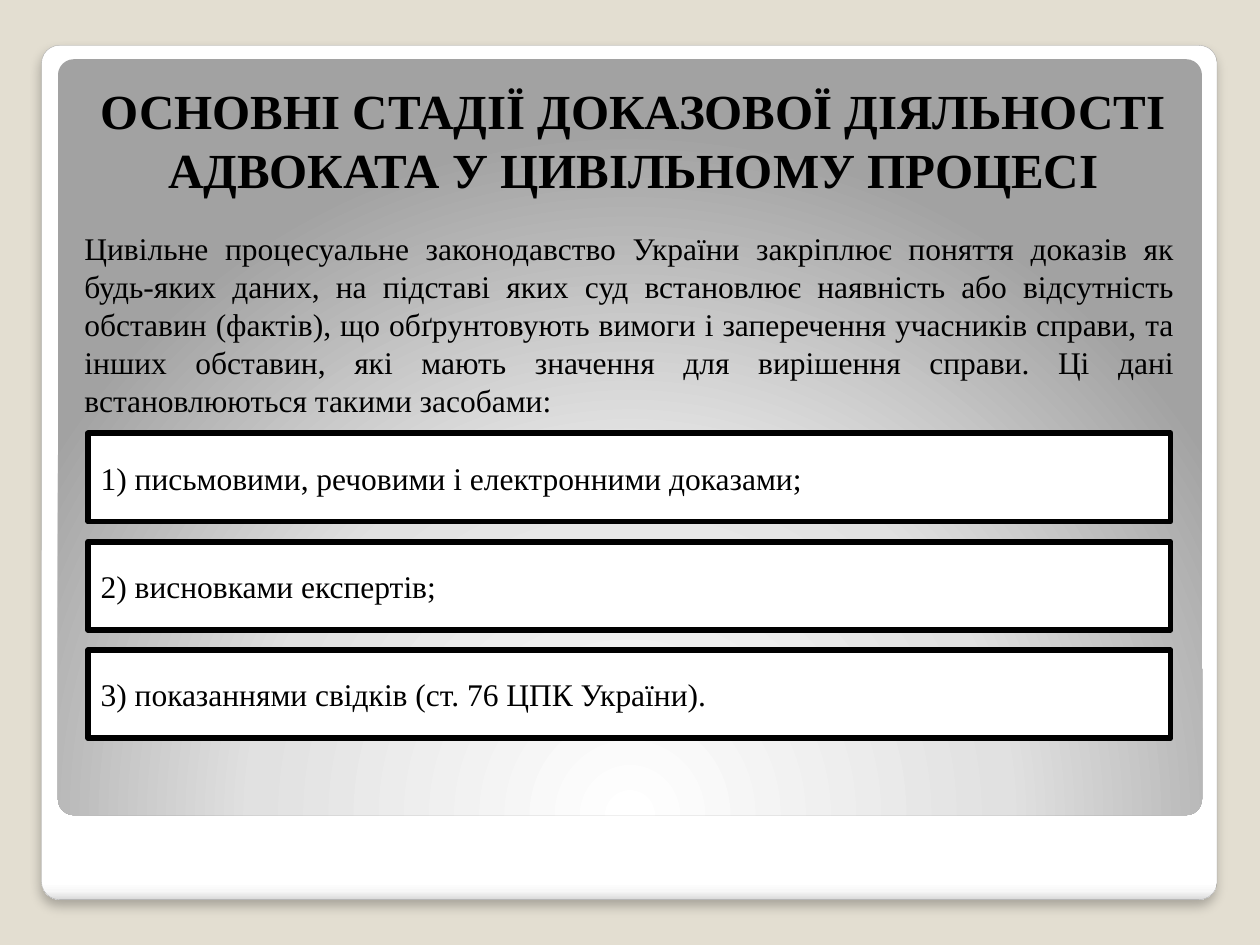
from lxml import etree
from pptx import Presentation
from pptx.dml.color import RGBColor
from pptx.enum.shapes import MSO_SHAPE
from pptx.enum.text import MSO_ANCHOR, PP_ALIGN
from pptx.oxml import parse_xml
from pptx.oxml.ns import qn
from pptx.util import Inches, Pt

RECT, ROUND = MSO_SHAPE.RECTANGLE, MSO_SHAPE.ROUNDED_RECTANGLE
TOP, MIDDLE, BOTTOM = MSO_ANCHOR.TOP, MSO_ANCHOR.MIDDLE, MSO_ANCHOR.BOTTOM
CENTER, JUSTIFY = PP_ALIGN.CENTER, PP_ALIGN.JUSTIFY
NS = "http://schemas.openxmlformats.org/drawingml/2006/main"

# Content
FONT = "Times New Roman"
TITLE = "ОСНОВНІ СТАДІЇ ДОКАЗОВОЇ ДІЯЛЬНОСТІ АДВОКАТА У ЦИВІЛЬНОМУ ПРОЦЕСІ"
INTRO = (
    "Цивільне процесуальне законодавство України закріплює поняття доказів "
    "як будь-яких даних, на підставі яких суд встановлює наявність або "
    "відсутність обставин (фактів), що обґрунтовують вимоги і заперечення "
    "учасників справи, та інших обставин, які мають значення для вирішення "
    "справи. Ці дані встановлюються такими засобами:"
)
ITEMS = [
    "1) письмовими, речовими і електронними доказами;",
    "2) висновками експертів;",
    "3) показаннями свідків (ст. 76 ЦПК України).",
]

# Gradients: stops in percent, then the direction
CARD = [(0, "FFFFFF"), (98, "FFFFFF"), (99, "F7F7F7"), (100, "DADADA")]
DOWN = '<a:lin ang="5400000" scaled="0"/>'
PANEL = [(0, "FFFFFF"), (55, "E1E1E1"), (100, "A2A2A2")]
GLOW = ('<a:path path="circle"><a:fillToRect l="50000" t="175000" '
        'r="50000" b="-75000"/></a:path>')


def color(code):
    return RGBColor.from_string(code)


def add_box(slide, kind, box):
    shape = slide.shapes.add_shape(kind, *map(Inches, box))
    shape.shadow.inherit = False
    return shape


def add_panel(slide, box, stops, way):
    shape = add_box(slide, ROUND, box)
    shape.adjustments[0] = 0.021
    shape.line.fill.background()
    shape.fill.solid()
    marks = "".join(f'<a:gs pos="{pos * 1000}"><a:srgbClr val="{code}"/></a:gs>'
                    for pos, code in stops)
    grad = parse_xml(f'<a:gradFill xmlns:a="{NS}" rotWithShape="1">'
                     f'<a:gsLst>{marks}</a:gsLst>{way}</a:gradFill>')
    props = shape.fill._xPr
    props.replace(props.find(qn("a:solidFill")), grad)
    return shape


def add_shadow(shape):
    effects = shape._element.spPr.find(qn("a:effectLst"))
    effects.append(parse_xml(
        f'<a:outerShdw xmlns:a="{NS}" blurRad="{Pt(6)}" dist="{Pt(4)}" '
        'dir="5400000" algn="ctr" rotWithShape="0"><a:srgbClr val="000000">'
        '<a:alpha val="25000"/></a:srgbClr></a:outerShdw>'))


def set_text(shape, text, size, align, anchor, bold=False):
    frame = shape.text_frame
    frame.word_wrap = True
    frame.vertical_anchor = anchor
    frame.text = text
    para = frame.paragraphs[0]
    para.alignment = align
    font = para.runs[0].font
    font.name, font.size, font.bold = FONT, Pt(size), bold
    font.color.rgb = color("000000")
    return frame


def main():
    deck = Presentation()
    deck.slide_width, deck.slide_height = Inches(10), Inches(7.5)
    slide = deck.slides.add_slide(deck.slide_layouts[6])
    back = slide.background.fill
    back.solid()
    back.fore_color.rgb = color("E3DED1")

    # White card with the grey panel on it
    card = add_panel(slide, (0.33, 0.36, 9.33, 6.78), CARD, DOWN)
    card.line.color.rgb = color("A4A4A4")
    card.line.width = Pt(0.16)
    add_shadow(card)
    add_panel(slide, (0.46, 0.47, 9.08, 6), PANEL, GLOW)

    # Title and introduction
    title = slide.shapes.add_textbox(*map(Inches, (0.55, 0.47, 8.95, 1.15)))
    set_text(title, TITLE, 28, CENTER, BOTTOM, bold=True)
    intro = slide.shapes.add_textbox(*map(Inches, (0.47, 1.72, 8.95, 1.88)))
    frame = set_text(intro, INTRO, 18, JUSTIFY, TOP)
    frame.margin_left, frame.margin_top = Inches(0.2), Inches(0.1)
    frame.paragraphs[0].space_before = Pt(2.5)

    # Framed list of evidence
    for i, item in enumerate(ITEMS):
        row = add_box(slide, RECT, (0.7, 3.44 + 0.86 * i, 8.59, 0.7))
        row.fill.solid()
        row.fill.fore_color.rgb = color("FFFFFF")
        row.line.color.rgb = color("000000")
        row.line.width = Pt(3.35)
        etree.SubElement(row._element.spPr.find(qn("a:ln")), qn("a:round"))
        set_text(row, item, 18, JUSTIFY, MIDDLE)

    deck.save("out.pptx")


if __name__ == "__main__":
    main()
